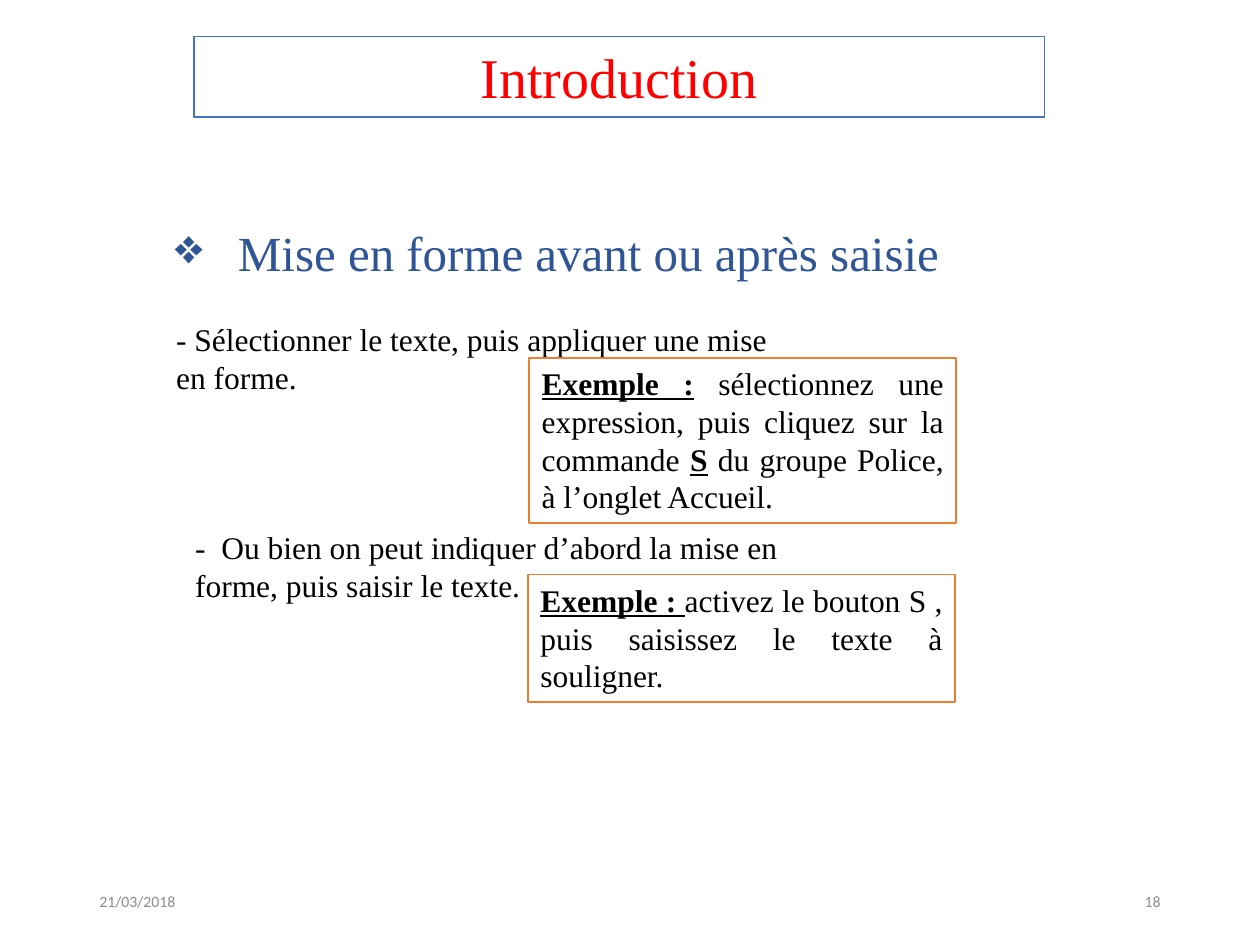
import pptx
import pptx.util
import pptx.dml.color
import pptx.enum.shapes
import pptx.enum.text
import lxml.etree

theme = {
    "serif": "Times New Roman", "sans": "Calibri",
    "title": 32, "head": 28, "body": 18, "foot": 9,
    "red": "FF0000", "blue": "2F5597", "black": "000000", "grey": "8C8C8C",
    "white": "FFFFFF", "frame": "4472C4", "orange": "ED7D31",
}
align = pptx.enum.text.PP_ALIGN
anchor = pptx.enum.text.MSO_ANCHOR

deck = pptx.Presentation()
deck.slide_width = pptx.util.Inches(10)
deck.slide_height = pptx.util.Inches(7.5)
slide = deck.slides.add_slide(deck.slide_layouts[6])

# Grid of 100 columns and 75 rows
col = deck.slide_width / 100
row = deck.slide_height / 75


def tint(name):
    return pptx.dml.color.RGBColor.from_string(theme[name])


def block(area, runs, size, color, side=align.LEFT, edge=None, face="serif"):
    """Place a text block, framed if it has an edge; a run is (text, bold, underline)."""
    left, top, wide, high = area
    place = [int(n) for n in (left * col, top * row, wide * col, high * row)]
    if edge:
        shape = slide.shapes.add_shape(pptx.enum.shapes.MSO_SHAPE.RECTANGLE, *place)
        shape.shadow.inherit = False
        shape.fill.solid()
        shape.fill.fore_color.rgb = tint("white")
        shape.line.color.rgb = tint(edge)
        shape.line.width = pptx.util.Pt(1)
    else:
        shape = slide.shapes.add_textbox(*place)
    frame = shape.text_frame
    frame.word_wrap = True
    frame.vertical_anchor = anchor.TOP
    para = frame.paragraphs[0]
    para.alignment = side
    for text, bold, under in runs:
        run = para.add_run()
        run.text = text
        font = run.font
        font.name = theme[face]
        font.size = pptx.util.Pt(theme[size])
        font.color.rgb = tint(color)
        font.bold = bold
        font.underline = under
    return frame


# Footer: date and page number
for left, text, side in ((6.9, "21/03/2018", align.LEFT), (70.6, "18", align.RIGHT)):
    foot = block((left, 69.5, 22.5, 4), [(text, False, False)], "foot", "grey",
                 side, face="sans")
    foot.vertical_anchor = anchor.MIDDLE

# Section heading with a diamond bullet
head = block((12.9, 17.2, 64.2, 5.7),
             [("Mise en forme avant ou après saisie", False, False)], "head", "blue")
head.word_wrap = False
props = head.paragraphs[0]._p.get_or_add_pPr()
dent = pptx.util.Inches(0.5)
props.set("marL", str(dent))
props.set("indent", str(-dent))
mark = lxml.etree.SubElement(props, pptx.oxml.ns.qn("a:buChar"))
mark.set("char", "❖")

# Two ways of working, each followed by its framed example
steps = (
    ((13, 24.9, 50, 7.1),
     "- Sélectionner le texte, puis appliquer une mise en forme.",
     (42, 28.4, 33.9, 13.1),
     [("Exemple :", True, True), (" ", True, False),
      ("sélectionnez une expression, puis cliquez sur la commande ", False, False),
      ("S", True, True), (" ", True, False),
      ("du groupe Police, à l’onglet Accueil.", False, False)]),
    ((14.5, 41.4, 48.5, 7.1),
     "-  Ou bien on peut indiquer d’abord la mise en forme, puis saisir le texte.",
     (41.9, 45.6, 33.9, 10.1),
     [("Exemple : ", True, True),
      ("activez le bouton S , puis saisissez le texte à souligner. ", False, False)]),
)
for area, text, box, runs in steps:
    block(area, [(text, False, False)], "body", "black")
    block(box, runs, "body", "black", align.JUSTIFY, "orange")

# Title
block((15.4, 2.9, 67.5, 6.4), [("Introduction", False, False)], "title", "red",
      align.CENTER, "frame")

deck.save("out.pptx")
